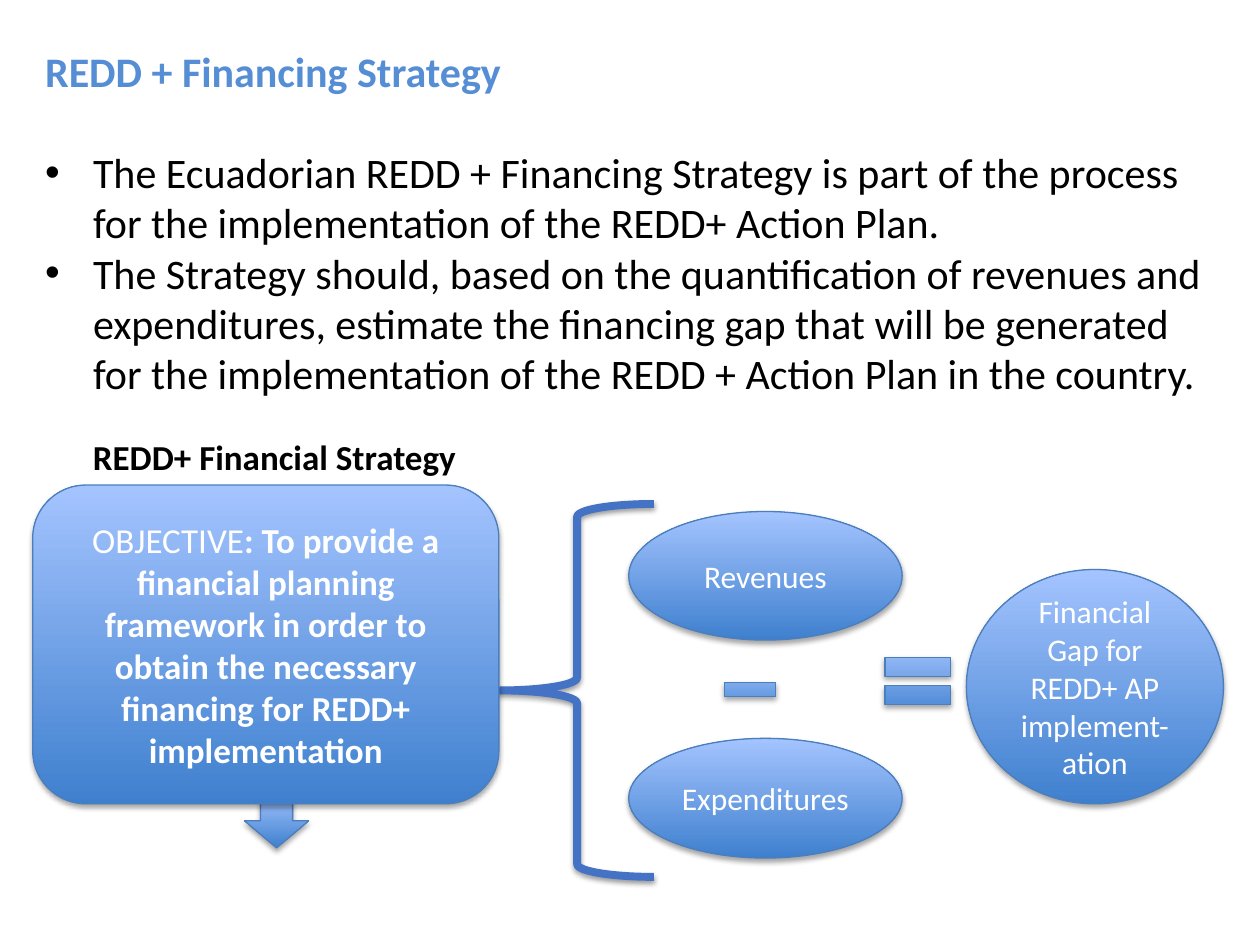
from dataclasses import dataclass

import pptx
import pptx.dml.color
import pptx.enum.shapes
import pptx.enum.text
import pptx.oxml
import pptx.oxml.ns
import pptx.util

Inches = pptx.util.Inches
Pt = pptx.util.Pt
Kind = pptx.enum.shapes.MSO_SHAPE
Align = pptx.enum.text.PP_ALIGN
Anchor = pptx.enum.text.MSO_ANCHOR
qn = pptx.oxml.ns.qn
NS = pptx.oxml.ns.nsdecls("a")

FONT = "Calibri"
DARK, LIGHT, EDGE, BRACE = "3F80CE", "A4C4FF", "4B7EBC", "4472C4"
TITLE, BLACK, WHITE = "558ED5", "000000", "FFFFFF"
BULLETS = [
    "The Ecuadorian REDD + Financing Strategy is part of the process "
    "for the implementation of the REDD+ Action Plan.",
    "The Strategy should, based on the quantification of revenues and "
    "expenditures, estimate the financing gap that will be generated "
    "for the implementation of the REDD + Action Plan in the country.",
]


@dataclass
class Node:
    kind: int
    left: float
    top: float
    width: float
    height: float
    text: str = ""
    bold: str = ""
    size: int = 18


NODES = [
    Node(Kind.OVAL, 4.99, 5.86, 2.17, 0.95, "Expenditures"),
    Node(Kind.OVAL, 4.99, 4.06, 2.17, 1.02, "Revenues"),
    Node(Kind.OVAL, 7.67, 4.52, 2.04, 1.86,
         "Financial Gap for REDD+ AP implement-ation"),
    Node(Kind.MATH_MINUS, 5.68, 5.24, 0.55, 0.47),
    Node(Kind.MATH_EQUAL, 6.93, 5.09, 0.71, 0.63),
    Node(Kind.DOWN_ARROW, 1.94, 6.3, 0.51, 0.43),
    Node(Kind.LEFT_BRACE, 3.97, 4, 1.22, 2.96),
    Node(Kind.ROUNDED_RECTANGLE, 0.26, 3.85, 3.7, 2.53, "OBJECTIVE",
         ": To provide a financial planning framework in order to obtain "
         "the necessary financing for REDD+ implementation", 20),
]


def color(code: str) -> pptx.dml.color.RGBColor:
    return pptx.dml.color.RGBColor.from_string(code)


def style(para, size: int, code: str, bold: bool = False) -> None:
    font = para.font
    font.name, font.size, font.bold = FONT, Pt(size), bold
    font.color.rgb = color(code)


def add_shadow(shape, alpha: int, dist: float) -> None:
    shape.shadow.inherit = False
    effects = shape.element.spPr.find(qn("a:effectLst"))
    effects.append(pptx.oxml.parse_xml(
        f'<a:outerShdw {NS} blurRad="{Pt(3.1)}" dist="{Pt(dist)}" '
        f'dir="5400000" rotWithShape="0"><a:srgbClr val="{BLACK}">'
        f'<a:alpha val="{alpha * 1000}"/></a:srgbClr></a:outerShdw>'))


def add_bullet(para) -> None:
    props = para._p.get_or_add_pPr()
    props.set("marL", str(Inches(0.38)))
    props.set("indent", str(-Inches(0.38)))
    props.append(pptx.oxml.parse_xml(f'<a:buFont {NS} typeface="Arial"/>'))
    props.append(pptx.oxml.parse_xml(f'<a:buChar {NS} char="•"/>'))


def add_box(slide, left: float, top: float, width: float, height: float):
    box = slide.shapes.add_textbox(
        Inches(left), Inches(top), Inches(width), Inches(height))
    frame = box.text_frame
    frame.word_wrap = True
    frame.auto_size = pptx.enum.text.MSO_AUTO_SIZE.SHAPE_TO_FIT_TEXT
    return frame


def add_node(slide, node: Node) -> None:
    shape = slide.shapes.add_shape(
        node.kind, Inches(node.left), Inches(node.top),
        Inches(node.width), Inches(node.height))
    brace = node.kind == Kind.LEFT_BRACE
    if brace:
        shape.fill.background()
    else:
        shape.fill.gradient()
        shape.fill.gradient_angle = 90
        for stop, code in zip(shape.fill.gradient_stops, (DARK, LIGHT)):
            stop.color.rgb = color(code)
    shape.line.color.rgb = color(BRACE if brace else EDGE)
    shape.line.width = Pt(4.5 if brace else 0.75)
    add_shadow(shape, *((38, 1.6) if brace else (35, 1.8)))
    if node.text:
        frame = shape.text_frame
        frame.word_wrap = True
        frame.vertical_anchor = Anchor.MIDDLE
        para = frame.paragraphs[0]
        para.alignment = Align.CENTER
        style(para, node.size, WHITE)
        para.add_run().text = node.text
        if node.bold:
            run = para.add_run()
            run.text = node.bold
            run.font.bold = True


def main() -> None:
    deck = pptx.Presentation()
    deck.slide_width, deck.slide_height = Inches(10), Inches(7.5)
    slide = deck.slides.add_slide(deck.slide_layouts[6])

    body = add_box(slide, 0.26, 0.31, 9.41, 2.93)
    title = body.paragraphs[0]
    title.text = "REDD + Financing Strategy"
    title.space_after = Pt(29)
    style(title, 24, TITLE, True)
    for text in BULLETS:
        para = body.add_paragraph()
        para.text = text
        style(para, 24, BLACK)
        add_bullet(para)

    label = add_box(slide, 0.55, 3.41, 3.26, 0.44).paragraphs[0]
    label.text = "REDD+ Financial Strategy"
    label.alignment = Align.CENTER
    style(label, 20, BLACK, True)

    for node in NODES:
        add_node(slide, node)
    deck.save("out.pptx")


if __name__ == "__main__":
    main()
